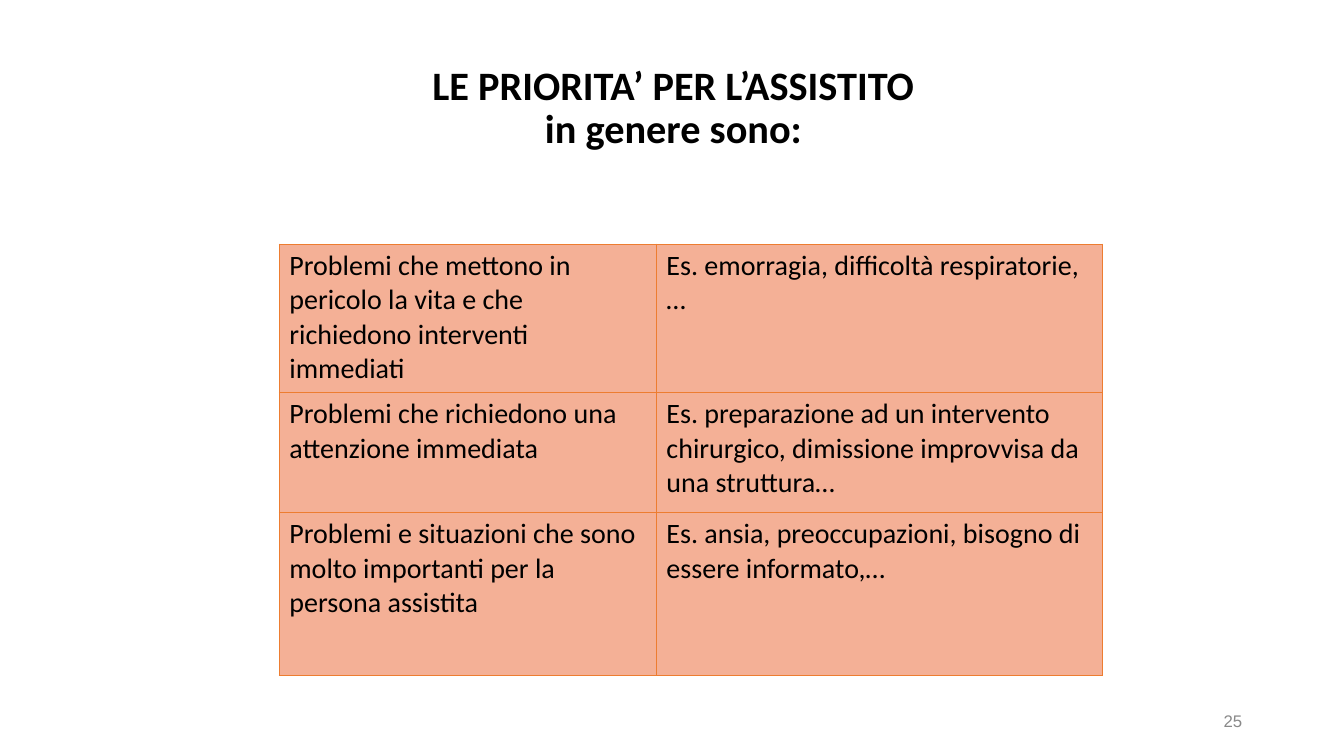
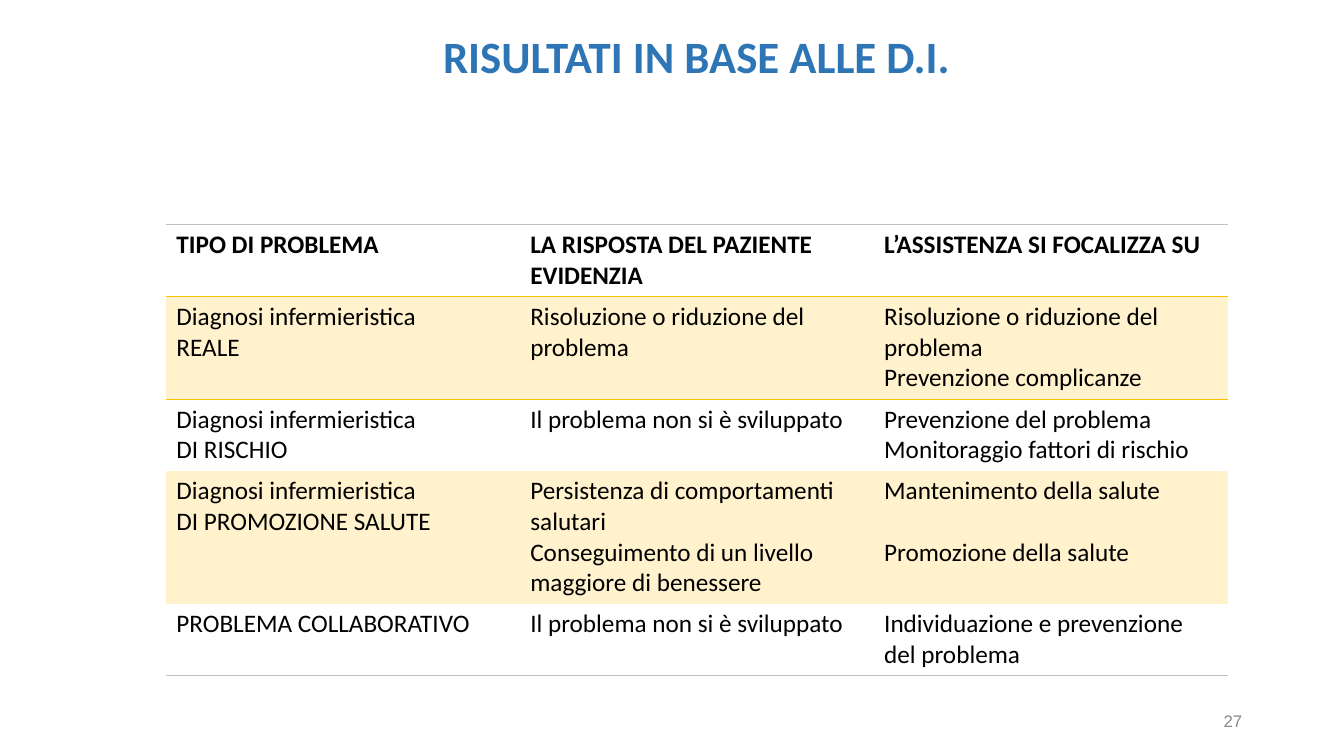
from lxml.etree import SubElement
from pptx import Presentation
from pptx.dml.color import RGBColor
from pptx.enum.text import MSO_ANCHOR, PP_ALIGN
from pptx.oxml.ns import qn
from pptx.util import Inches, Pt

COLORS = {
    "black": "000000",
    "blue": "2E75B6",
    "gray": "898989",
    "rule": "BFBFBF",
    "orange": "ED7D31",
    "salmon": "F4B096",
    "amber": "FFC000",
    "cream": "FFF2CC",
}
PLAIN_TABLE_STYLE = "{2D5ABB26-0587-4C30-8999-92F81FD0307C}"

PRIORITIES = [
    ["Problemi che mettono in pericolo la vita e che richiedono interventi immediati",
     "Es. emorragia, difficoltà respiratorie, …"],
    ["Problemi che richiedono una attenzione immediata",
     "Es. preparazione ad un intervento chirurgico, dimissione improvvisa da una struttura…"],
    ["Problemi e situazioni che sono molto importanti per la persona assistita",
     "Es. ansia, preoccupazioni, bisogno di essere informato,…"],
]
RESULTS = [
    ["TIPO DI PROBLEMA", "LA RISPOSTA DEL PAZIENTE EVIDENZIA",
     "L’ASSISTENZA SI FOCALIZZA SU"],
    ["Diagnosi infermieristica\nREALE",
     "Risoluzione o riduzione del problema",
     "Risoluzione o riduzione del problema\nPrevenzione complicanze"],
    ["Diagnosi infermieristica\nDI RISCHIO",
     "Il problema non si è sviluppato",
     "Prevenzione del problema\nMonitoraggio fattori di rischio"],
    ["Diagnosi infermieristica\nDI PROMOZIONE SALUTE",
     "Persistenza di comportamenti salutari\n"
     "Conseguimento di un livello maggiore di benessere",
     "Mantenimento della salute\nPromozione della salute"],
    ["PROBLEMA COLLABORATIVO",
     "Il problema non si è sviluppato",
     "Individuazione e prevenzione del problema"],
]


def color(name):
    return RGBColor.from_string(COLORS[name])


def write(frame, text, size=18, font="Calibri", ink="black", bold=False,
          align=PP_ALIGN.LEFT, spacing=None):
    """Fill a text frame; each line of the text becomes a paragraph."""
    frame.word_wrap = True
    frame.text = text
    for para in frame.paragraphs:
        para.alignment = align
        para.line_spacing = spacing
        for span in para.runs:
            span.font.size = Pt(size)
            span.font.name = font
            span.font.bold = bold
            span.font.color.rgb = color(ink)


def add_text(page, text, left, top, width, height, **style):
    box = page.shapes.add_textbox(Inches(left), Inches(top), Inches(width), Inches(height))
    box.text_frame.vertical_anchor = MSO_ANCHOR.MIDDLE
    write(box.text_frame, text, **style)


def add_title(page, text, left, top, height, **style):
    add_text(page, text, left, top, 9, height, bold=True, align=PP_ALIGN.CENTER, **style)


def add_page_number(page, number):
    add_text(page, str(number), 9.42, 6.95, 3, 0.4,
             size=12, font="Arial", ink="gray", align=PP_ALIGN.RIGHT)


def add_table(page, rows, left, top, widths, heights, size, header=False):
    """Add an unstyled table holding the given rows of text."""
    frame = page.shapes.add_table(len(rows), len(widths), Inches(left), Inches(top),
                                  Inches(sum(widths)), Inches(sum(heights)))
    table = frame.table
    table._tbl.tblPr.find(qn("a:tableStyleId")).text = PLAIN_TABLE_STYLE
    table.first_row = header
    table.horz_banding = False
    for column, width in zip(table.columns, widths):
        column.width = Inches(width)
    for index, (row, height) in enumerate(zip(table.rows, heights)):
        row.height = Inches(height)
        for cell, text in zip(row.cells, rows[index]):
            write(cell.text_frame, text, size=size, bold=header and index == 0)
    return table


def paint_row(row, fill=None, width=0.5, **borders):
    """Fill the cells of a row and draw the borders named L, R, T or B."""
    for cell in row.cells:
        properties = cell._tc.get_or_add_tcPr()
        for side in "LRTB":
            if side in borders:
                line = SubElement(properties, qn("a:ln" + side), w=str(Pt(width)))
                solid = SubElement(line, qn("a:solidFill"))
                SubElement(solid, qn("a:srgbClr"), val=COLORS[borders[side]])
        if fill:
            cell.fill.solid()
            cell.fill.fore_color.rgb = color(fill)
        else:
            cell.fill.background()


def build_priorities(page):
    add_title(page, "LE PRIORITA’ PER L’ASSISTITO\vin genere sono:", 2.18, 0.5, 1.16,
              size=28.8, spacing=0.9)
    add_page_number(page, 25)
    table = add_table(page, PRIORITIES, 2.77, 2.42, [3.74, 4.42], [1.47, 1.19, 1.62], size=20)
    for row in table.rows:
        paint_row(row, fill="salmon", **dict.fromkeys("LRTB", "orange"))


def build_results(page):
    add_title(page, "RISULTATI IN BASE ALLE D.I.", 2.41, 0.13, 0.85, size=32, ink="blue")
    add_page_number(page, 27)
    table = add_table(page, RESULTS, 1.65, 2.23, [3.51] * 3,
                      [0.71, 1.02, 0.71, 1.32, 0.71], size=18, header=True)
    borders = {0: {"T": "rule", "B": "amber"}, 1: {"T": "amber"},
               len(RESULTS) - 1: {"B": "rule"}}
    for index, row in enumerate(table.rows):
        paint_row(row, fill="cream" if index % 2 else None, width=1, **borders.get(index, {}))
    health_promotion = table.cell(3, 2).text_frame.paragraphs[1]
    health_promotion.space_before = Pt(22)


def main():
    deck = Presentation()
    deck.slide_width, deck.slide_height = Inches(13.33), Inches(7.5)
    blank = deck.slide_layouts[6]
    for build in (build_priorities, build_results):
        build(deck.slides.add_slide(blank))
    deck.save("out.pptx")


if __name__ == "__main__":
    main()
